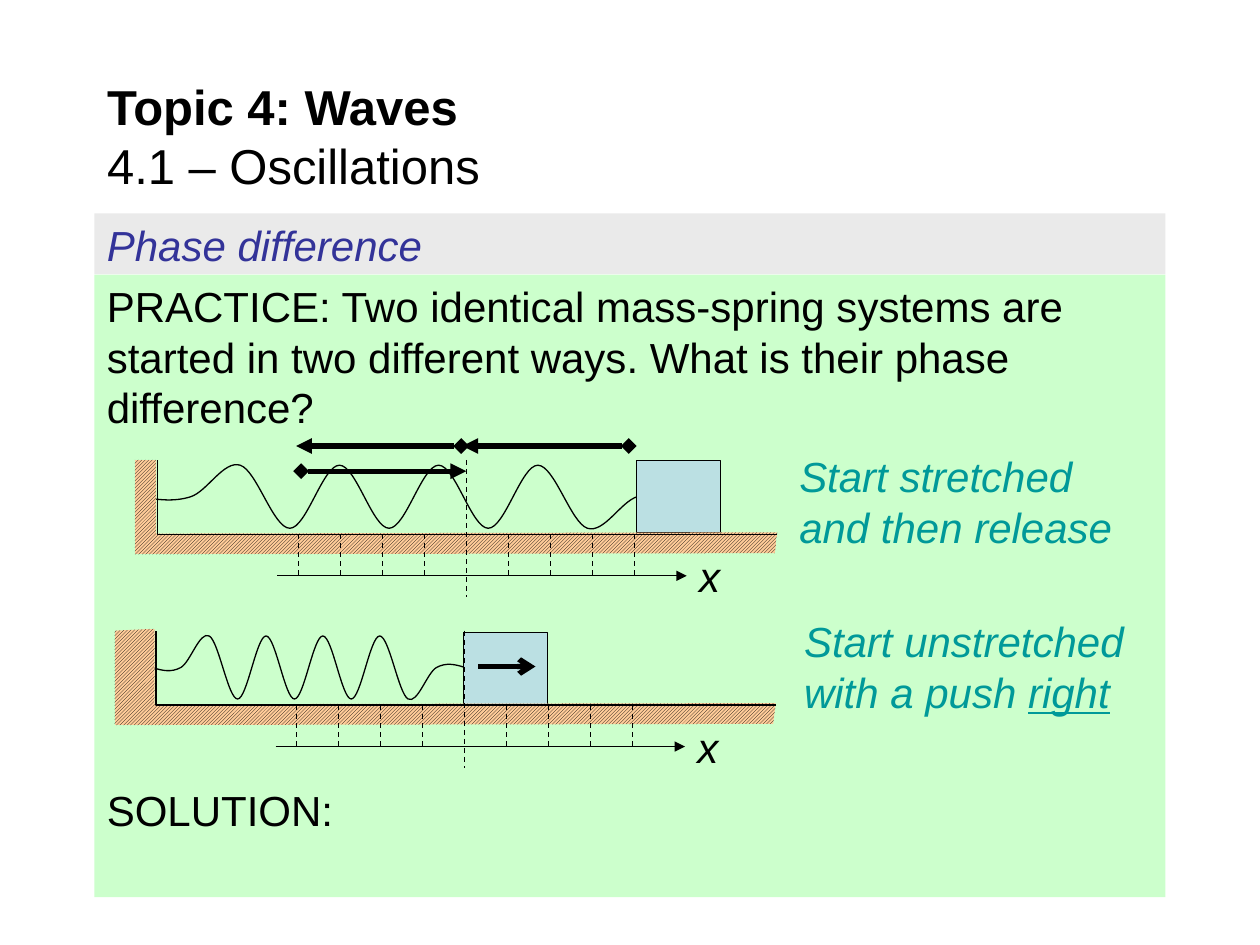
"""Build a slide on the phase difference of two mass-spring systems."""
from dataclasses import dataclass
from typing import NamedTuple

from lxml.etree import SubElement
from pptx import Presentation
from pptx.dml.color import RGBColor
from pptx.enum.dml import MSO_LINE, MSO_PATTERN
from pptx.enum.shapes import MSO_CONNECTOR, MSO_SHAPE
from pptx.enum.text import MSO_ANCHOR, PP_ALIGN
from pptx.oxml.ns import qn
from pptx.util import Inches, Pt


@dataclass(frozen=True)
class Theme:
    font: str = "Arial"
    ink: str = "000000"
    caption: str = "009999"
    heading: str = "333399"
    practice: str = "CCFFCC"
    band: str = "EAEAEA"
    mass: str = "BBE0E3"
    wood: str = "FFCC99"
    title_size: float = 28
    text_size: float = 24
    thin: float = 0.75
    thick: float = 3


class Point(NamedTuple):
    column: float
    row: float


class Box(NamedTuple):
    column: float
    row: float
    columns: float
    rows: float


@dataclass(frozen=True)
class System:
    origin: Point
    wall: float
    spring_start: float
    spring_end: float
    mass: Point
    tilt: float


@dataclass(frozen=True)
class Arrow:
    start: Point
    end: Point
    head: str
    tail: str = "none"


THEME = Theme()
COLUMNS, ROWS = 100, 75
WIDTH, HEIGHT = Inches(10), Inches(7.5)
SPRING_MIDDLE, FLOOR, AXIS = 2.93, 5.9, 9.2
TICK_GAP, TICKS_PER_SIDE = 10 / 3, 4
SPRING_HEIGHTS = [-1.5, 0, 0] + [-2.5, 2.5] * 4 + [0, 0, 1.5]

SYSTEMS = [
    System(Point(37, 36.5), 10.7, 11.2, 54.5, Point(50.5, 36.54), 0),
    System(Point(36.87, 50.05), 9.1, 12.1, 36.9, Point(36.8, 50.18), 0.15),
]
ARROWS = [
    Arrow(Point(42.5, 52.9), Point(37.9, 52.9), "arrow"),
    Arrow(Point(49.9, 35.4), Point(36.7, 35.4), "diamond", "triangle"),
    Arrow(Point(36.6, 35.4), Point(23.5, 35.4), "diamond", "triangle"),
    Arrow(Point(23.9, 37.4), Point(37, 37.4), "diamond", "triangle"),
]
CAPTIONS = [
    (Box(62.45, 35.27, 29.1, 9.1), "Start stretched and then release", ""),
    (Box(62.83, 48.37, 33.4, 9.1), "Start unstretched with a push ", "right"),
]


def across(columns: float) -> int:
    return round(WIDTH * columns / COLUMNS)


def down(rows: float) -> int:
    return round(HEIGHT * rows / ROWS)


def frame(box: Box) -> tuple[int, int, int, int]:
    return across(box.column), down(box.row), across(box.columns), down(box.rows)


def write(paragraph, text: str, color: str = THEME.ink, **formats) -> None:
    run = paragraph.add_run()
    run.text = text
    run.font.color.rgb = RGBColor.from_string(color)
    for name, value in {"name": THEME.font, "size": Pt(THEME.text_size), **formats}.items():
        setattr(run.font, name, value)


def prepare(text_frame, **formats) -> None:
    for name, value in {"word_wrap": True, "vertical_anchor": MSO_ANCHOR.TOP, **formats}.items():
        setattr(text_frame, name, value)
    for paragraph in text_frame.paragraphs:
        paragraph.alignment = PP_ALIGN.LEFT


def outline(shape, width: float = THEME.thin) -> None:
    shape.line.color.rgb = RGBColor.from_string(THEME.ink)
    shape.line.width = Pt(width)


def add_rectangle(shapes, box: Box, color: str):
    shape = shapes.add_shape(MSO_SHAPE.RECTANGLE, *frame(box))
    shape.shadow.inherit = False
    shape.fill.solid()
    shape.fill.fore_color.rgb = RGBColor.from_string(color)
    shape.line.fill.background()
    return shape


def add_line(shapes, start: Point, end: Point, width: float = THEME.thin,
             dashed: bool = False, head: str = "none", tail: str = "none") -> None:
    line = shapes.add_connector(MSO_CONNECTOR.STRAIGHT, across(start.column), down(start.row),
                                across(end.column), down(end.row))
    outline(line, width)
    if dashed:
        line.line.dash_style = MSO_LINE.DASH
    properties = line._element.spPr
    stroke = properties.find(qn("a:ln"))
    SubElement(stroke, qn("a:headEnd"), type=head)
    SubElement(stroke, qn("a:tailEnd"), type=tail)
    SubElement(properties, qn("a:effectLst"))


def add_outline(shapes, points: list[Point], close: bool = False):
    corners = [(across(point.column), down(point.row)) for point in points]
    builder = shapes.build_freeform(*corners[0])
    builder.add_line_segments(corners[1:], close=close)
    shape = builder.convert_to_shape()
    shape.shadow.inherit = False
    shape.fill.background()
    shape.line.fill.background()
    return shape


def add_curve(shapes, points: list[Point]):
    """Draw a start point followed by groups of two handles and an end point."""
    shape = add_outline(shapes, points)
    outline_path = next(shape._element.iter(qn("a:path")))
    segments = outline_path.findall(qn("a:lnTo"))
    for first in range(0, len(segments), 3):
        curve = SubElement(outline_path, qn("a:cubicBezTo"))
        for segment in segments[first:first + 3]:
            curve.append(segment[0])
            outline_path.remove(segment)
    return shape


def spring_points(system: System) -> list[Point]:
    """Give the handles and the evenly spaced turns of the spring."""
    turns = len(SPRING_HEIGHTS) - 3
    step = (system.spring_end - system.spring_start) / turns
    middle = system.origin.row + SPRING_MIDDLE
    points = [Point(system.spring_start, middle)]
    for turn in range(turns):
        before, start, end, after = SPRING_HEIGHTS[turn:turn + 4]
        heights = [start + (end - before) / 6, end - (after - start) / 6, end]
        points += [Point(system.spring_start + (turn + third / 3) * step, middle + height)
                   for third, height in enumerate(heights, start=1)]
    return points


def add_system(slide, system: System) -> None:
    shapes = slide.shapes.add_group_shape().shapes

    def at(column: float, row: float) -> Point:
        return Point(system.origin.column + column, system.origin.row + row)

    wall = system.wall - system.origin.column
    outline(add_curve(shapes, spring_points(system)))
    outline(add_rectangle(shapes, Box(*system.mass, 6.67, 5.75), THEME.mass))
    support = add_outline(shapes, [at(24.5, 7.4), at(24.7, 5.75), at(-24.6, 5.85),
                                   at(-24.6, -system.tilt), at(wall, 0), at(wall, 7.5)], close=True)
    support.fill.patterned()
    support.fill.pattern = MSO_PATTERN.LIGHT_UPWARD_DIAGONAL
    support.fill.fore_color.rgb = RGBColor.from_string(THEME.ink)
    support.fill.back_color.rgb = RGBColor.from_string(THEME.wood)
    outline(add_outline(shapes, [at(24.7, FLOOR), at(-24.5, FLOOR), at(-24.5, 0)]))
    add_line(shapes, at(0, 0), at(0, 10.9), dashed=True)
    add_line(shapes, at(-15, AXIS), at(17.5, AXIS), tail="triangle")
    label = shapes.add_textbox(*frame(Box(*at(17.5, 6.7), 3.7, 5)))
    prepare(label.text_frame, word_wrap=False)
    write(label.text_frame.paragraphs[0], "x", italic=True)
    for tick in range(-TICKS_PER_SIDE, TICKS_PER_SIDE + 1):
        if tick:
            add_line(shapes, at(tick * TICK_GAP, FLOOR), at(tick * TICK_GAP, AXIS), dashed=True)


def main() -> None:
    presentation = Presentation()
    presentation.slide_width, presentation.slide_height = WIDTH, HEIGHT
    slide = presentation.slides.add_slide(presentation.slide_layouts[5])
    practice = add_rectangle(slide.shapes, Box(7.5, 21.8, 85, 49.4), THEME.practice).text_frame
    solution = practice.add_paragraph()
    solution.space_before = Pt(201.5)
    prepare(practice)
    write(practice.paragraphs[0], "PRACTICE: Two identical mass-spring systems are started "
                                  "in two different ways. What is their phase difference?")
    write(solution, "SOLUTION:")
    title = slide.shapes.title
    title.left, title.top, title.width, title.height = frame(Box(7.5, 5.85, 85, 9.8))
    prepare(title.text_frame, vertical_anchor=MSO_ANCHOR.MIDDLE)
    heading = title.text_frame.paragraphs[0]
    write(heading, "Topic 4: Waves", size=Pt(THEME.title_size), bold=True)
    heading.add_line_break()
    write(heading, "4.1 – Oscillations", size=Pt(THEME.title_size), bold=False)
    for box, text, stressed in CAPTIONS:
        caption = slide.shapes.add_textbox(*frame(box)).text_frame
        prepare(caption)
        write(caption.paragraphs[0], text, THEME.caption, italic=True)
        if stressed:
            write(caption.paragraphs[0], stressed, THEME.caption, italic=True, underline=True)
    for system in SYSTEMS:
        add_system(slide, system)
    for arrow in ARROWS:
        add_line(slide.shapes, arrow.start, arrow.end, THEME.thick, head=arrow.head, tail=arrow.tail)
    band = add_rectangle(slide.shapes, Box(7.5, 16.93, 85, 4.83), THEME.band).text_frame
    prepare(band)
    write(band.paragraphs[0], "Phase difference", THEME.heading, italic=True)
    presentation.save("out.pptx")


if __name__ == "__main__":
    main()
